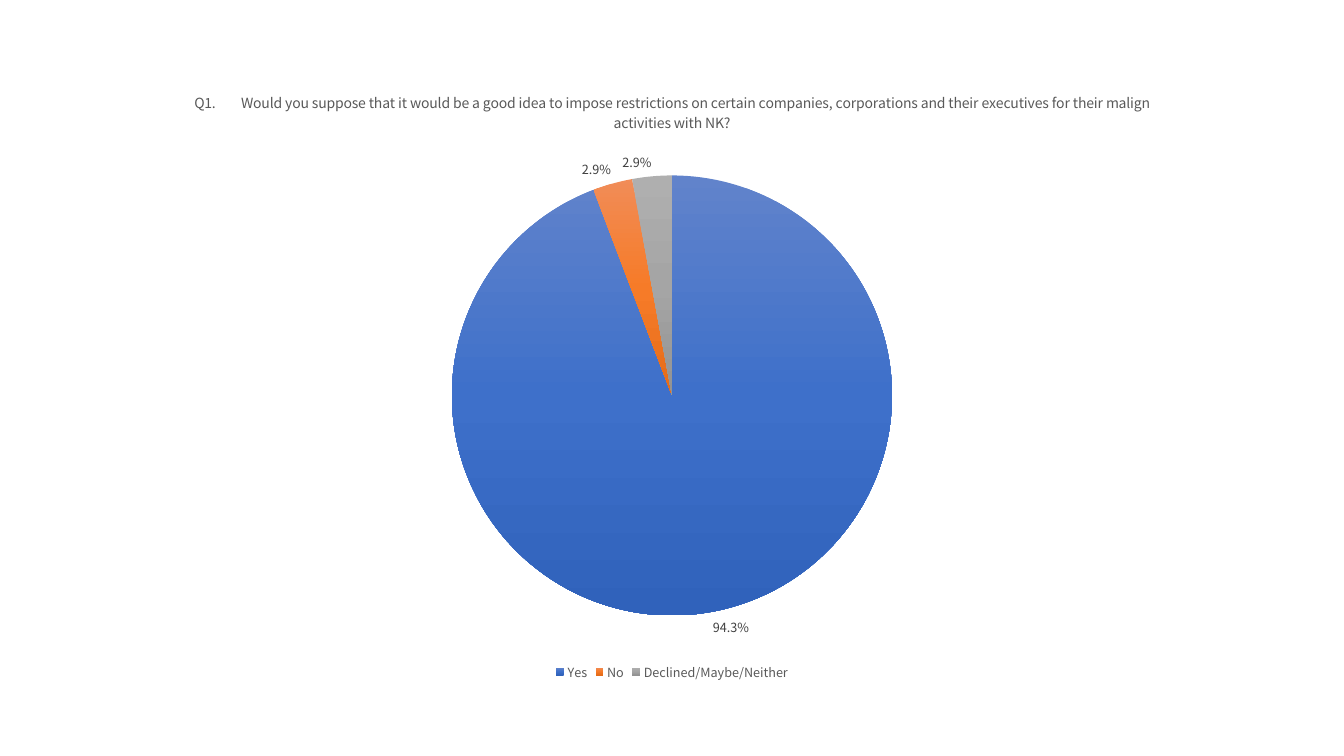
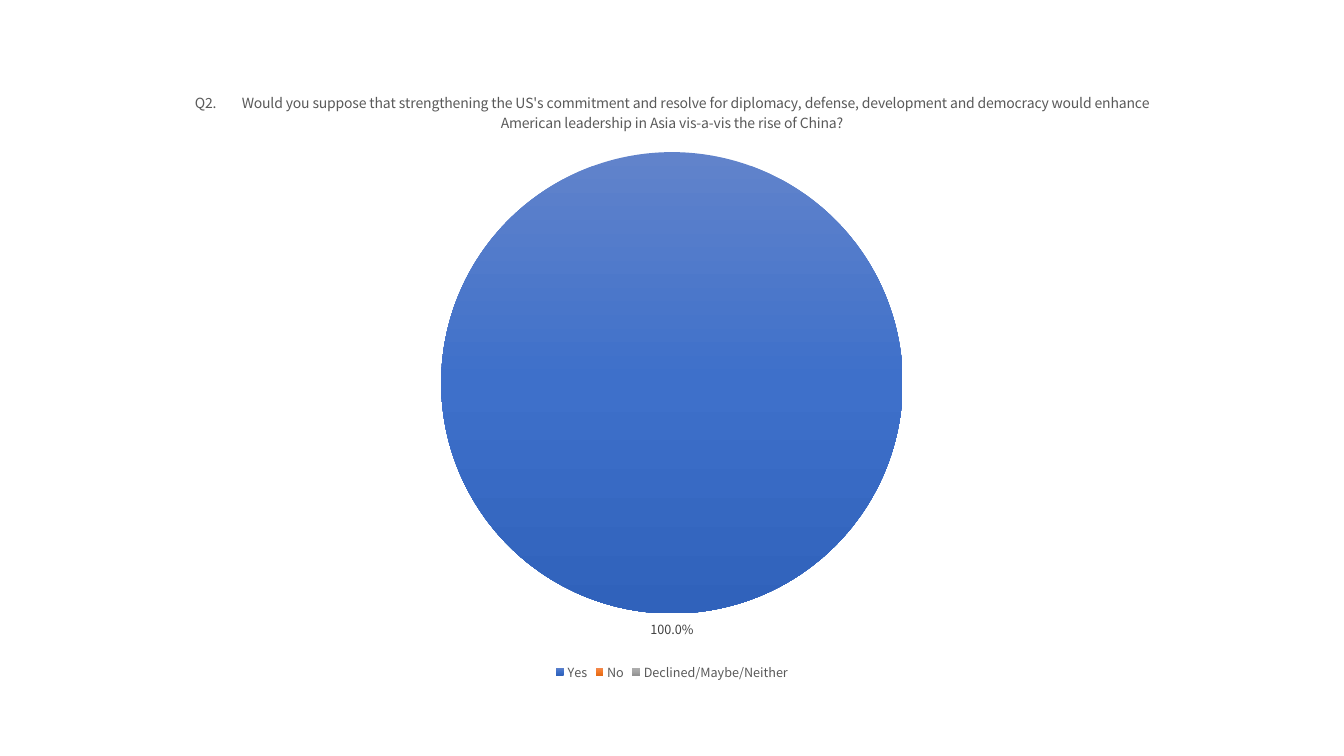
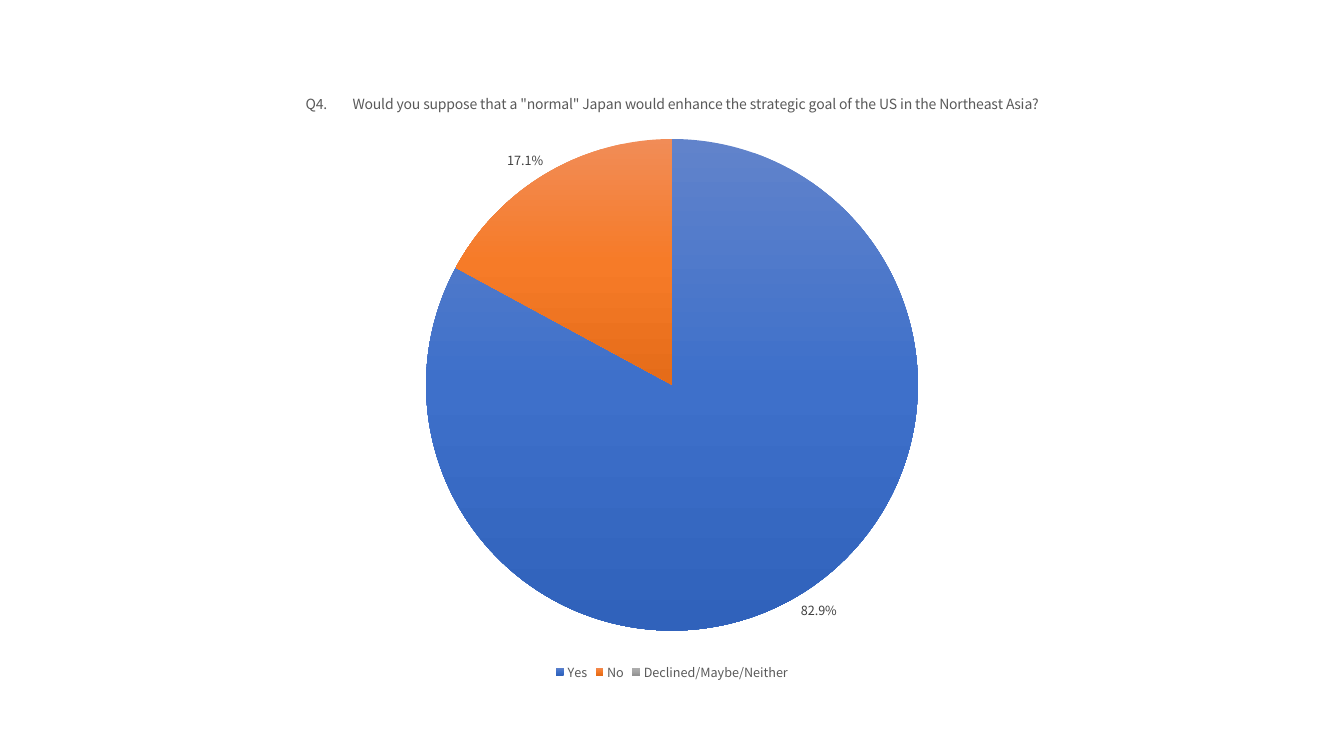
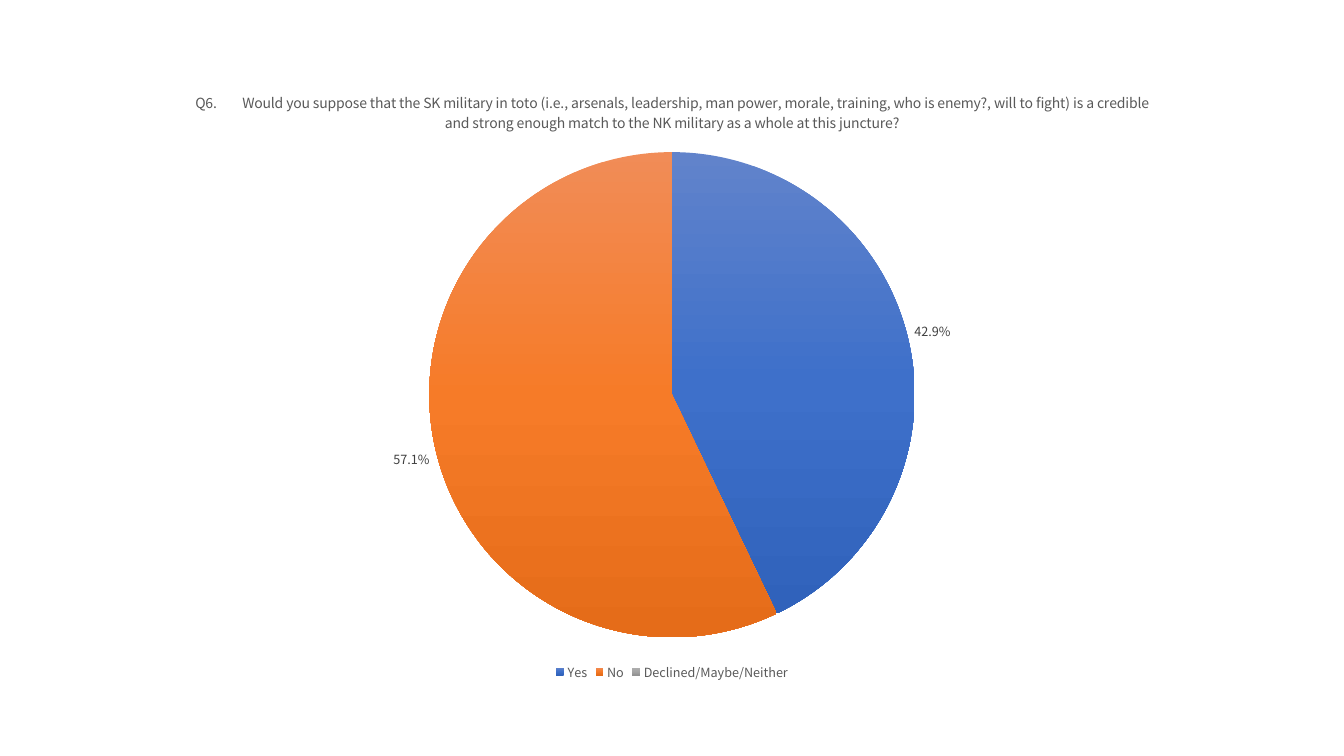
from copy import deepcopy
from pptx import Presentation
from pptx.chart import data as cd
from pptx.dml import color as dml
from pptx.enum import chart as ec
from pptx.util import Inches, Pt

FACE = "Noto Sans CJK KR"
GREY, DARK = "595959", "404040"
CATS = ["Yes", "No", "Declined/Maybe/Neither"]
FADES = [
    ["6183CB", "3E70CA", "3062BB"],
    ["F18C57", "F67B28", "E56C19"],
    ["AFAFAF", "A5A5A5", "939393"],
]
POLLS = [
    ("Q1.", "Would you suppose that it would be a good idea to impose restrictions on certain "
     "companies, corporations and their executives for their malign activities with NK?",
     [0.943, 0.029, 0.029]),
    ("Q2.", "Would you suppose that strengthening the US's commitment and resolve for diplomacy, "
     "defense, development and democracy would enhance American leadership in Asia "
     "vis-a-vis the rise of China?",
     [1, 0, 0]),
    ("Q4.", "Would you suppose that a \"normal\" Japan would enhance the strategic goal of the US "
     "in the Northeast Asia?",
     [0.829, 0.171, 0]),
    ("Q6.", "Would you suppose that the SK military in toto (i.e., arsenals, leadership, man power, "
     "morale, training, who is enemy?, will to fight) is a credible and strong enough match "
     "to the NK military as a whole at this juncture?",
     [0.429, 0.571, 0]),
]


def style(font, size=9, tone=GREY):
    font.name = FACE
    font.size = Pt(size)
    font.bold = False
    font.color.rgb = dml.RGBColor.from_string(tone)


def write(para, words, gap=0, **form):
    run = para.add_run()
    run.text = words
    style(run.font, **form)
    if gap:
        run.font._element.set("spc", str(gap * 100))


deck = Presentation()
deck.slide_width, deck.slide_height = Inches(13.33), Inches(7.5)

for mark, ask, vals in POLLS:
    slide = deck.slides.add_slide(deck.slide_layouts[6])
    data = cd.CategoryChartData(number_format="0.0%")
    data.categories = CATS
    data.add_series(f"{mark} {ask}", vals)
    chart = slide.shapes.add_chart(
        ec.XL_CHART_TYPE.PIE, Inches(0.7), Inches(0.7), Inches(11.93), Inches(6.09), data
    ).chart
    style(chart.font, size=10, tone="000000")

    chart.has_title = True
    chart.chart_title.include_in_layout = False
    para = chart.chart_title.text_frame.paragraphs[0]
    style(para.font, size=10)
    for words, gap in [(mark, 0), (" ", 16), (ask, 0)]:
        write(para, words, gap=gap, size=10)

    chart.has_legend = True
    chart.legend.position = ec.XL_LEGEND_POSITION.BOTTOM
    chart.legend.include_in_layout = False
    style(chart.legend.font)

    plot = chart.plots[0]
    plot.vary_by_categories = True
    plot.has_data_labels = True
    tags = plot.data_labels
    tags.show_value = True
    tags.show_percentage = False
    tags.number_format = "0.0%;;"
    tags.number_format_is_linked = False
    tags.position = ec.XL_LABEL_POSITION.OUTSIDE_END
    style(tags.font, tone=DARK)

    for i, fade in enumerate(FADES):
        look = plot.series[0].points[i].format
        look.line.fill.background()
        look.fill.gradient()
        look.fill.gradient_angle = 270
        stops = chart._chartSpace.xpath(".//a:gsLst")[-1]
        stops.insert(1, deepcopy(stops[0]))
        for stop, spot, tone in zip(look.fill.gradient_stops, [0, 0.5, 1], fade):
            stop.position = spot
            stop.color.rgb = dml.RGBColor.from_string(tone)

deck.save("out.pptx")
